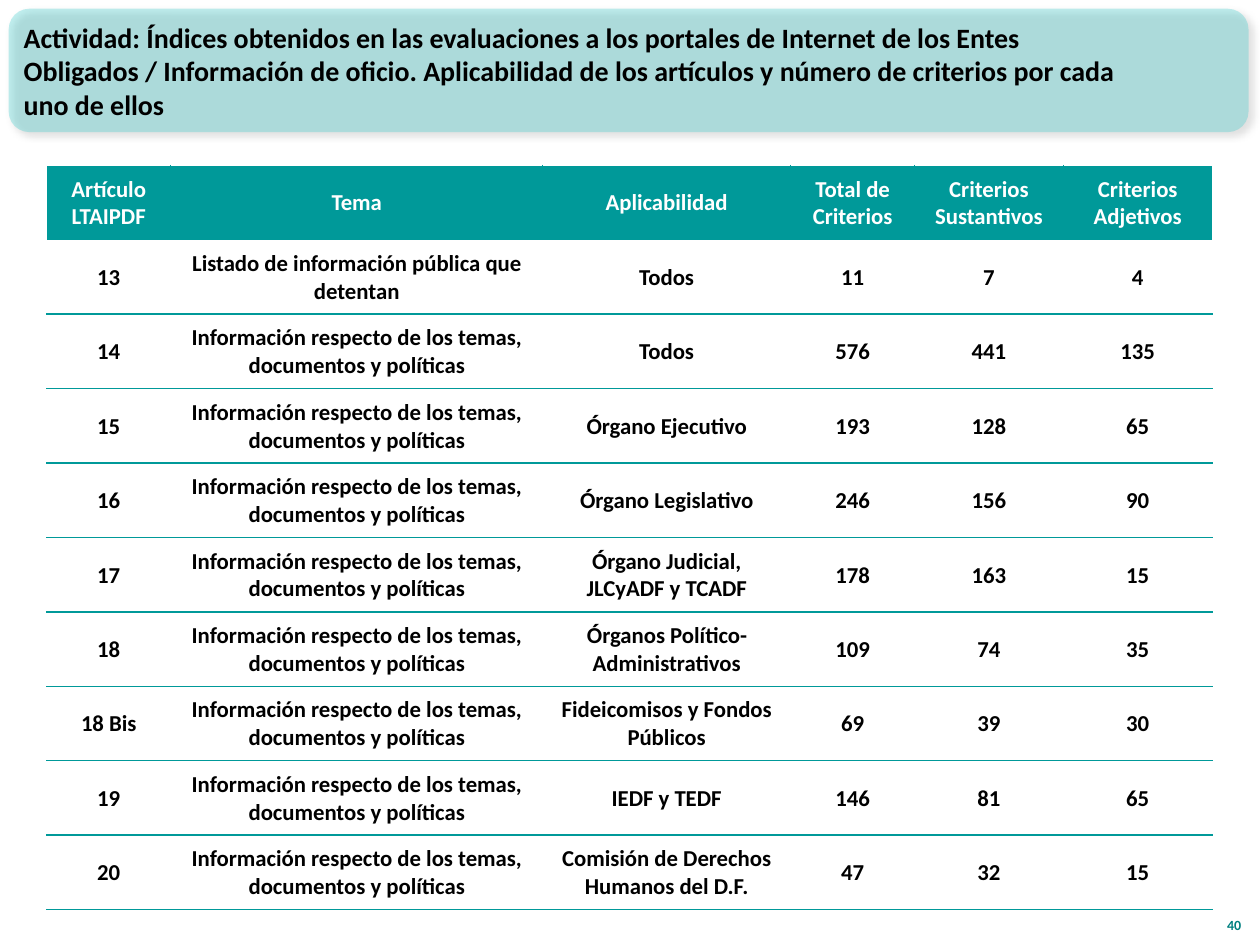
from dataclasses import dataclass
from lxml import etree
from pptx import Presentation
from pptx.dml.color import RGBColor
from pptx.enum.shapes import MSO_SHAPE
from pptx.enum.text import MSO_ANCHOR, PP_ALIGN
from pptx.oxml.ns import qn
from pptx.util import Pt

ROUNDED = MSO_SHAPE.ROUNDED_RECTANGLE
MIDDLE, BOTTOM = MSO_ANCHOR.MIDDLE, MSO_ANCHOR.BOTTOM
LEFT, CENTER, RIGHT = PP_ALIGN.LEFT, PP_ALIGN.CENTER, PP_ALIGN.RIGHT


@dataclass(frozen=True)
class Theme:
    """Colours, font and type sizes of the deck."""
    font: str = "Calibri"
    banner: str = "33CCCC"
    teal: str = "009999"
    number: str = "008080"
    black: str = "000000"
    white: str = "FFFFFF"
    title_size: int = 16
    table_size: int = 13
    number_size: int = 8


THEME = Theme()
TITLE = (
    "Actividad: Índices obtenidos en las evaluaciones a los portales de Internet "
    "de los Entes Obligados / Información de oficio. Aplicabilidad de los artículos "
    "y número de criterios por cada uno de ellos"
)
HEADERS = ("Artículo LTAIPDF", "Tema", "Aplicabilidad", "Total de Criterios",
           "Criterios Sustantivos", "Criterios Adjetivos")
LISTING = "Listado de información pública que detentan"
TOPICS = "Información respecto de los temas, documentos y políticas"
ARTICLES = (
    ("13", LISTING, "Todos", "11", "7", "4"),
    ("14", TOPICS, "Todos", "576", "441", "135"),
    ("15", TOPICS, "Órgano Ejecutivo", "193", "128", "65"),
    ("16", TOPICS, "Órgano Legislativo", "246", "156", "90"),
    ("17", TOPICS, "Órgano Judicial,\nJLCyADF y TCADF", "178", "163", "15"),
    ("18", TOPICS, "Órganos Político-Administrativos", "109", "74", "35"),
    ("18 Bis", TOPICS, "Fideicomisos y Fondos Públicos", "69", "39", "30"),
    ("19", TOPICS, "IEDF y TEDF", "146", "81", "65"),
    ("20", TOPICS, "Comisión de Derechos Humanos del D.F.", "47", "32", "15"),
)
COLUMN_SHARES = (10, 30, 20, 10, 12, 12)


def write(frame, text, size, color, align):
    """Write bold text into a frame, one paragraph per line."""
    frame.word_wrap = True
    for index, line in enumerate(text.split("\n")):
        para = frame.add_paragraph() if index else frame.paragraphs[0]
        para.alignment = align
        span = para.add_run()
        span.text = line
        span.font.name = THEME.font
        span.font.size = Pt(size)
        span.font.bold = True
        span.font.color.rgb = RGBColor.from_string(color)


def add_text(page, box, text, size, color, align, anchor):
    """Add a text box that fills the given box."""
    frame = page.shapes.add_textbox(*map(Pt, box)).text_frame
    frame.vertical_anchor = anchor
    write(frame, text, size, color, align)


def add_color(parent, color, alpha):
    """Add a colour with an opacity in percent to an XML element."""
    node = etree.SubElement(parent, qn("a:srgbClr"), val=color)
    etree.SubElement(node, qn("a:alpha"), val=str(alpha * 1000))


def add_banner(page, box):
    """Add the translucent rounded banner with its shadow and title."""
    left, top, width, height = box
    banner = page.shapes.add_shape(ROUNDED, *map(Pt, box))
    banner.line.fill.background()
    banner.shadow.inherit = False
    banner.fill.solid()
    banner.fill.fore_color.rgb = RGBColor.from_string(THEME.banner)
    properties = banner.element.spPr
    fill = properties.find(qn("a:solidFill"))
    fill.clear()
    add_color(fill, THEME.banner, 30)
    shadow = etree.SubElement(
        properties.find(qn("a:effectLst")), qn("a:outerShdw"),
        blurRad=str(Pt(4)), dist=str(Pt(3)), dir=str(45 * 60000),
        algn="tl", rotWithShape="0")
    add_color(shadow, THEME.black, 40)
    add_text(page, (left + 1.5, top + 1.5, width - 65.5, height - 3), TITLE,
             THEME.title_size, THEME.black, LEFT, MIDDLE)


def set_borders(cell, borders):
    """Set the left, right, top and bottom lines of a cell as colour and width."""
    properties = cell._tc.get_or_add_tcPr()
    for index, (side, border) in enumerate(zip("LRTB", borders)):
        line = etree.Element(qn(f"a:ln{side}"))
        if border:
            color, width = border
            line.set("w", str(Pt(width)))
            fill = etree.SubElement(line, qn("a:solidFill"))
            etree.SubElement(fill, qn("a:srgbClr"), val=color)
        else:
            etree.SubElement(line, qn("a:noFill"))
        properties.insert(index, line)


def add_articles_table(page, box):
    """Add the table of articles, their scope and number of criteria."""
    rows = (HEADERS, *ARTICLES)
    table = page.shapes.add_table(len(rows), len(HEADERS), *map(Pt, box)).table
    table.horz_banding = False
    for column, share in zip(table.columns, COLUMN_SHARES):
        column.width = Pt(box[2] * share / sum(COLUMN_SHARES))
    teal, white = (THEME.teal, 1), (THEME.white, 0.75)
    last = len(HEADERS) - 1
    for row_index, texts in enumerate(rows):
        header = row_index == 0
        table.rows[row_index].height = Pt(box[3] / len(rows))
        inner = teal if header else None
        for column_index, text in enumerate(texts):
            cell = table.cell(row_index, column_index)
            cell.vertical_anchor = MIDDLE
            cell.margin_left = cell.margin_right = cell.margin_top = Pt(0.7)
            cell.margin_bottom = Pt(0)
            if header:
                cell.fill.solid()
                cell.fill.fore_color.rgb = RGBColor.from_string(THEME.teal)
            else:
                cell.fill.background()
            write(cell.text_frame, text, THEME.table_size,
                  THEME.white if header else THEME.black, CENTER)
            set_borders(cell, (
                white if column_index == 0 else inner,
                white if column_index == last else inner,
                white if header else teal if row_index > 1 else None,
                None if header else teal))


def main():
    """Build the slide and save the deck."""
    deck = Presentation()
    deck.slide_width, deck.slide_height = Pt(720), Pt(540)
    page = deck.slides.add_slide(deck.slide_layouts[6])
    add_banner(page, (5, 5, 708.5, 70.5))
    add_articles_table(page, (26.7, 94.5, 666, 425.4))
    add_text(page, (687.6, 508.3, 28.8, 28.8), "40", THEME.number_size,
             THEME.number, RIGHT, BOTTOM)
    deck.save("out.pptx")


if __name__ == "__main__":
    main()
